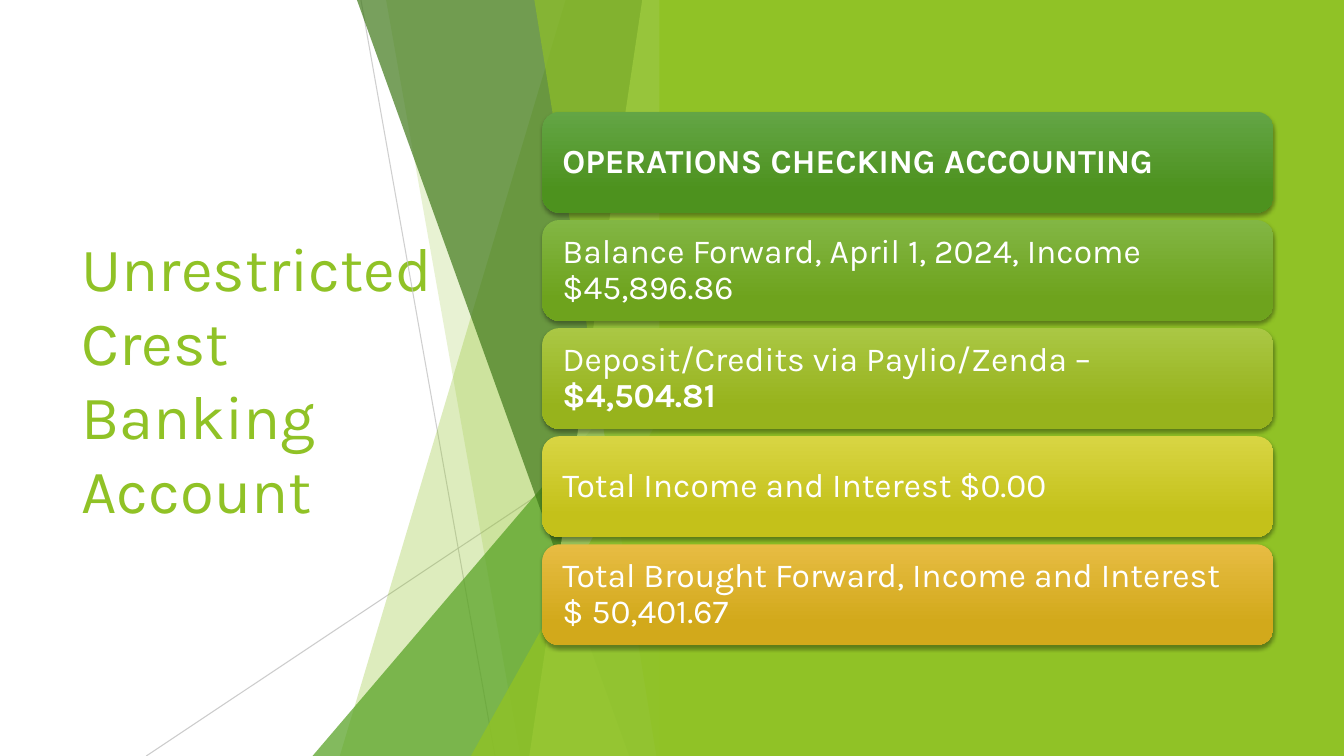
from dataclasses import dataclass

from lxml.etree import SubElement
from pptx import Presentation
from pptx.dml.color import RGBColor
from pptx.enum.shapes import MSO_CONNECTOR, MSO_SHAPE
from pptx.enum.text import MSO_ANCHOR, PP_ALIGN
from pptx.oxml.ns import qn
from pptx.util import Inches, Pt


@dataclass(frozen=True)
class Theme:
    font: str = "Karla"
    title_size: int = 44
    card_size: int = 24
    green: str = "90C226"
    mid_green: str = "54A021"
    dark_green: str = "3F7819"
    pale_green: str = "C0E474"
    rule: str = "BFBFBF"
    white: str = "FFFFFF"
    shadow: str = "000000"


@dataclass(frozen=True)
class Box:
    left: float
    top: float
    width: float
    height: float

    @property
    def right(self):
        return self.left + self.width

    @property
    def bottom(self):
        return self.top + self.height

    def lengths(self):
        return [Inches(v) for v in (self.left, self.top, self.width, self.height)]


THEME = Theme()

# Facets from back to front: kind, two measures, colour, opacity.
# A "quad" gives its top and bottom distance from the right edge,
# a "triangle" its width and height from the bottom right corner.
FACETS = [
    ("quad", 1.05, 3.29, THEME.green, 30),
    ("quad", 2.83, 1.5, THEME.green, 20),
    ("triangle", 3.56, 4.17, THEME.mid_green, 72),
    ("quad", 3.12, 0.42, THEME.dark_green, 70),
    ("quad", 0.29, 1.41, THEME.pale_green, 70),
    ("quad", 1.36, 0.15, THEME.green, 65),
    ("triangle", 1.99, 3.57, THEME.green, 80),
]

# Thin rules: start and end as (distance from right, distance from top), opacity
RULES = [
    ((3.08, 0), (1.75, 7.5), 75),
    ((0, 4.03), (5.21, 7.5), 80),
]

# Cards: gradient colours, then lines made of (text, bold) runs
CARDS = [
    ("63A545", "4D921E", [[("OPERATIONS CHECKING ACCOUNTING", True)]]),
    ("82B644", "6EA31D", [[("Balance Forward, April 1, 2024, Income", False)],
                          [("$45,896.86", False)]]),
    ("AAC744", "97B31C", [[("Deposit/Credits via Paylio/Zenda –", False)],
                          [("$4,504.81", True)]]),
    ("D8D543", "C4C11A", [[("Total Income and Interest $0.00", False)]]),
    ("E7BC43", "D2A91B", [[("Total Brought Forward, Income and Interest", False)],
                          [("$ 50,401.67", False)]]),
]


def set_opacity(shape, percent):
    for color in shape.element.spPr.iter(qn("a:srgbClr")):
        SubElement(color, qn("a:alpha"), val=str(percent * 1000))


def paint(shape, color, opacity=100):
    shape.shadow.inherit = False
    shape.line.fill.background()
    shape.fill.solid()
    shape.fill.fore_color.rgb = RGBColor.from_string(color)
    if opacity < 100:
        set_opacity(shape, opacity)


def add_span(para, text, size, color, bold=False):
    span = para.add_run()
    span.text = text
    span.font.name = THEME.font
    span.font.size = Pt(size)
    span.font.bold = bold
    span.font.color.rgb = RGBColor.from_string(color)


def add_rule(page, box, start, end, opacity):
    points = [Inches(v) for away, down in (start, end)
              for v in (box.right - away, box.top + down)]
    rule = page.shapes.add_connector(MSO_CONNECTOR.STRAIGHT, *points)
    rule.line.width = Pt(0.75)
    rule.line.color.rgb = RGBColor.from_string(THEME.rule)
    set_opacity(rule, opacity)
    SubElement(rule.element.spPr, qn("a:effectLst"))


def add_facet(page, box, kind, first, second, color, opacity):
    if kind == "triangle":
        area = Box(box.right - first, box.bottom - second, first, second)
        facet = page.shapes.add_shape(MSO_SHAPE.ISOSCELES_TRIANGLE, *area.lengths())
        facet.adjustments[0] = 1
    else:
        corners = [(box.right, box.top), (box.right, box.bottom),
                   (box.right - second, box.bottom)]
        outline = page.shapes.build_freeform(Inches(box.right - first), Inches(box.top))
        outline.add_line_segments([(Inches(x), Inches(y)) for x, y in corners])
        facet = outline.convert_to_shape()
    paint(facet, color, opacity)


def add_backdrop(page, fan, panel):
    for rule in RULES:
        add_rule(page, fan, *rule)
    for facet in FACETS:
        add_facet(page, fan, *facet)
    paint(page.shapes.add_shape(MSO_SHAPE.RECTANGLE, *panel.lengths()), THEME.green)


def add_title(page, box, text):
    frame = page.shapes.add_textbox(*box.lengths()).text_frame
    frame.word_wrap = True
    frame.vertical_anchor = MSO_ANCHOR.MIDDLE
    add_span(frame.paragraphs[0], text, THEME.title_size, THEME.green)


def add_card(page, box, top_color, bottom_color, lines):
    card = page.shapes.add_shape(MSO_SHAPE.ROUNDED_RECTANGLE, *box.lengths())
    card.line.fill.background()
    # Vertical gradient
    card.fill.gradient()
    card.fill.gradient_angle = 270
    stops = zip(card.fill.gradient_stops, (0, 0.78), (top_color, bottom_color))
    for stop, position, color in stops:
        stop.position = position
        stop.color.rgb = RGBColor.from_string(color)
    # Soft shadow below
    card.shadow.inherit = False
    effects = card.element.spPr.find(qn("a:effectLst"))
    shadow = SubElement(effects, qn("a:outerShdw"), blurRad=str(Pt(3)),
                        dist=str(Pt(2)), dir="5400000", rotWithShape="0")
    color = SubElement(shadow, qn("a:srgbClr"), val=THEME.shadow)
    SubElement(color, qn("a:alpha"), val="35000")
    # Text
    frame = card.text_frame
    frame.word_wrap = True
    frame.vertical_anchor = MSO_ANCHOR.MIDDLE
    frame.margin_left = frame.margin_right = Inches(0.15)
    frame.margin_top = frame.margin_bottom = Inches(0.1)
    para = frame.paragraphs[0]
    para.alignment = PP_ALIGN.LEFT
    para.line_spacing = 0.9
    for index, line in enumerate(lines):
        if index:
            para.add_line_break()
        for text, bold in line:
            add_span(para, text, THEME.card_size, THEME.white, bold)


def add_cards(page, box, card_height=1):
    pitch = (box.height - card_height) / (len(CARDS) - 1)
    for index, card in enumerate(CARDS):
        area = Box(box.left, box.top + index * pitch, box.width, card_height)
        add_card(page, area, *card)


def main():
    deck = Presentation()
    deck.slide_width, deck.slide_height = Inches(13.33), Inches(7.5)
    page = deck.slides.add_slide(deck.slide_layouts[6])
    page.background.fill.solid()
    page.background.fill.fore_color.rgb = RGBColor.from_string(THEME.white)

    title_box = Box(0.71, 1.51, 3.88, 4.48)
    add_title(page, title_box, "Unrestricted Crest Banking Account")
    add_backdrop(page, Box(1.45, 0, 5.21, 7.5), Box(6.54, 0, 6.79, 7.5))
    add_cards(page, Box(5.38, 1.11, 7.25, 5.29))
    deck.save("out.pptx")


if __name__ == "__main__":
    main()
